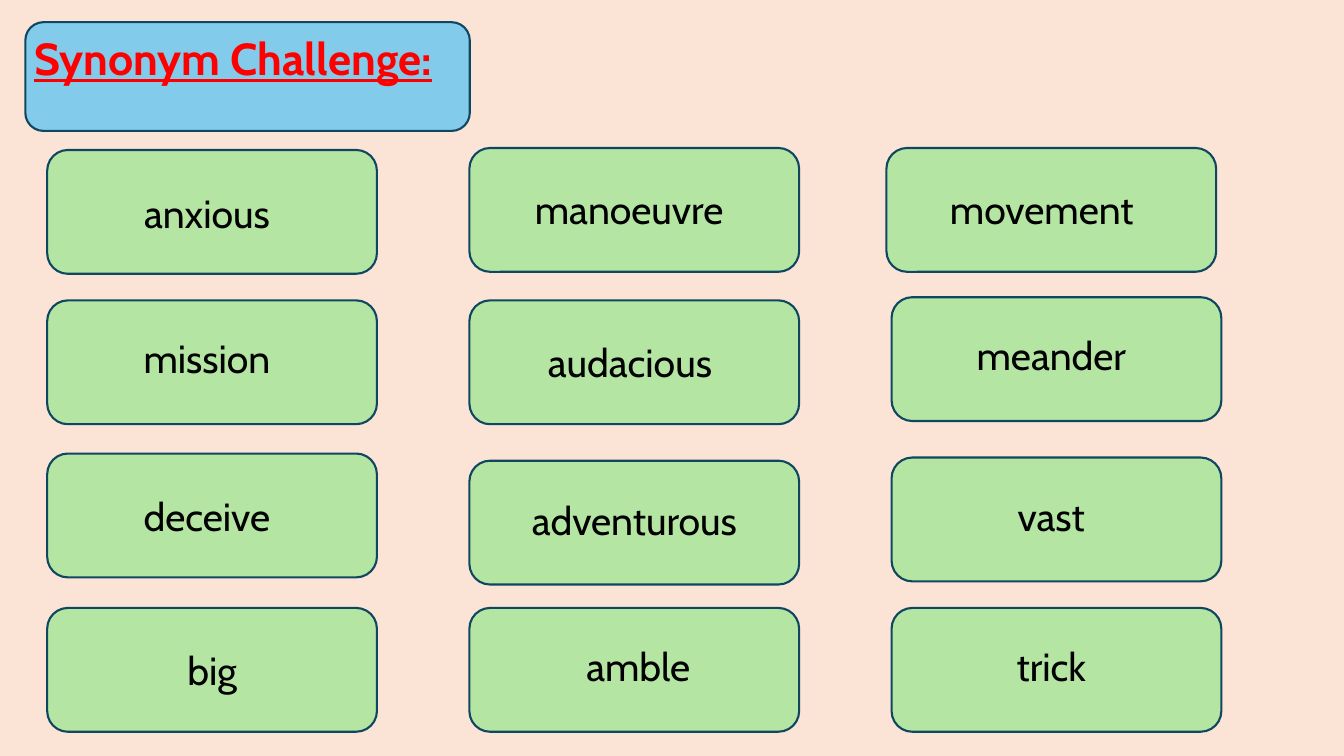
from dataclasses import dataclass

from pptx import Presentation, util as u
from pptx.dml.color import RGBColor
from pptx.enum import shapes, text
from pptx.slide import Slide


@dataclass(frozen=True)
class Theme:
    font: str = "Cabin"
    background: str = "FBE3D6"
    banner: str = "83CBEB"
    card: str = "B4E5A2"
    outline: str = "104760"
    title: str = "FF0000"
    word: str = "000000"
    title_size: int = 32
    word_size: int = 28
    line_width: float = 1.5


@dataclass(frozen=True)
class Box:
    """Left, top, width and height in centimetres."""
    x: float
    y: float
    w: float
    h: float

    def lengths(self) -> list[u.Length]:
        return [u.Cm(v) for v in (self.x, self.y, self.w, self.h)]


@dataclass(frozen=True)
class Card:
    word: str
    column: int
    y: float
    dx: float = 0.33  # label offset inside the card
    dy: float = 0.74
    shift: float = 0  # nudge away from the column edge


THEME = Theme()
LEFT, COLUMN_STEP = 1.19, 10.64
CARD_W, CARD_H = 8.31, 3.12
LABEL_W, LABEL_H = 7.39, 1.45

CARDS = [
    Card("anxious", 0, 3.78, dy=0.86),
    Card("mission", 0, 7.57),
    Card("deceive", 0, 11.43, dy=0.84),
    Card("big", 0, 15.32, dx=0.46, dy=0.84),
    Card("manoeuvre", 1, 3.73, dy=0.81),
    Card("audacious ", 1, 7.57, dx=0.46, dy=0.84),
    Card("adventurous", 1, 11.61, dx=0.46, dy=0.76),
    Card("amble", 1, 15.32, dx=0.56),
    Card("movement ", 2, 3.73, dy=0.81, shift=-0.13),
    Card("meander", 2, 7.49),
    Card("vast", 2, 11.53),
    Card("trick", 2, 15.32),
]


def add_panel(s: Slide, box: Box, fill: str) -> None:
    sp = s.shapes.add_shape(shapes.MSO_SHAPE.ROUNDED_RECTANGLE, *box.lengths())
    sp.shadow.inherit = False
    sp.fill.solid()
    sp.fill.fore_color.rgb = RGBColor.from_string(fill)
    sp.line.color.rgb = RGBColor.from_string(THEME.outline)
    sp.line.width = u.Pt(THEME.line_width)


def add_label(s: Slide, box: Box, words: str, size: int, color: str,
              align: text.PP_ALIGN, heading: bool = False) -> None:
    tf = s.shapes.add_textbox(*box.lengths()).text_frame
    tf.word_wrap = True
    tf.auto_size = text.MSO_AUTO_SIZE.SHAPE_TO_FIT_TEXT
    tf.text = words
    p = tf.paragraphs[0]
    p.alignment = align
    r = p.runs[0]
    r.font.name = THEME.font
    r.font.size = u.Pt(size)
    r.font.color.rgb = RGBColor.from_string(color)
    if heading:
        r.font.bold = r.font.underline = True


def add_card(s: Slide, card: Card) -> None:
    x = LEFT + card.column * COLUMN_STEP + card.shift
    add_panel(s, Box(x, card.y, CARD_W, CARD_H), THEME.card)
    add_label(s, Box(x + card.dx, card.y + card.dy, LABEL_W, LABEL_H), card.word,
              THEME.word_size, THEME.word, text.PP_ALIGN.CENTER)


def main() -> None:
    prs = Presentation()
    prs.slide_width, prs.slide_height = u.Cm(33.87), u.Cm(19.05)
    s = prs.slides.add_slide(prs.slide_layouts[6])
    s.background.fill.solid()
    s.background.fill.fore_color.rgb = RGBColor.from_string(THEME.background)

    # Title banner
    add_panel(s, Box(0.64, 0.56, 11.2, 2.74), THEME.banner)
    add_label(s, Box(0.61, 0.66, 11.23, 1.63), "Synonym Challenge:",
              THEME.title_size, THEME.title, text.PP_ALIGN.LEFT, heading=True)

    # Word cards
    for card in CARDS:
        add_card(s, card)

    prs.save("out.pptx")


if __name__ == "__main__":
    main()
